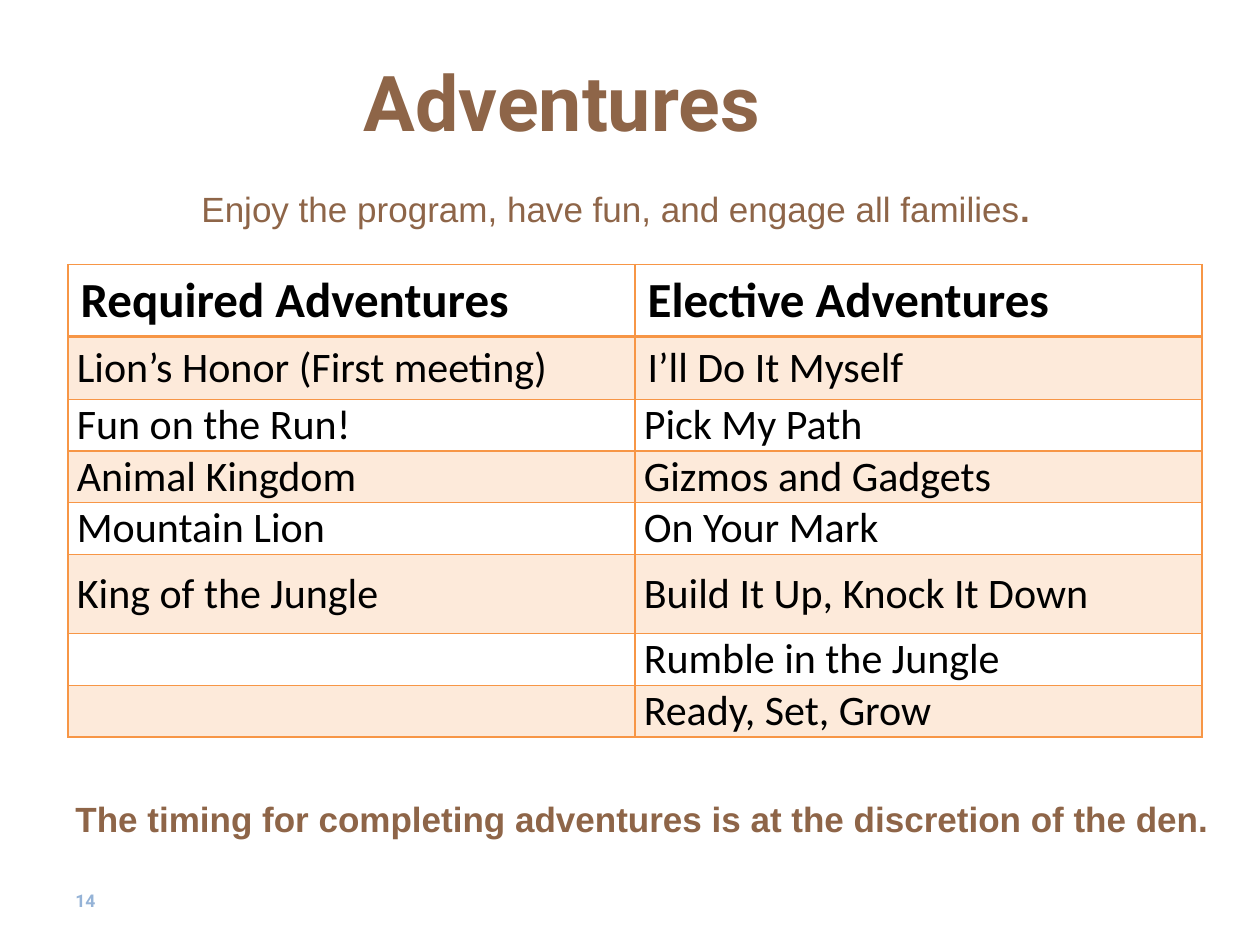
from lxml import etree
from pptx import Presentation
from pptx.dml.color import RGBColor
from pptx.enum.text import MSO_ANCHOR, PP_ALIGN
from pptx.oxml.ns import qn
from pptx.util import Inches, Pt

TOP = MSO_ANCHOR.TOP
MIDDLE = MSO_ANCHOR.MIDDLE
LEFT = PP_ALIGN.LEFT
CENTER = PP_ALIGN.CENTER

COLORS = {
    "brown": "8E6548",
    "number": "95B3D7",
    "border": "F79646",
    "band": "FDEADA",
    "text": "000000",
}

ADVENTURES = [
    ("Required Adventures", "Elective Adventures"),
    ("Lion’s Honor (First meeting)", "I’ll Do It Myself"),
    ("Fun on the Run!", "Pick My Path"),
    ("Animal Kingdom", "Gizmos and Gadgets"),
    ("Mountain Lion", "On Your Mark"),
    ("King of the Jungle", "Build It Up, Knock It Down"),
    ("", "Rumble in the Jungle"),
    ("", "Ready, Set, Grow"),
]
ROW_HEIGHTS = [0.57, 0.5, 0.41, 0.41, 0.41, 0.63, 0.41, 0.41]
ROOMY_CELLS = {(0, 0), (0, 1), (1, 1)}


class SlideBuilder:
    def __init__(self, slide):
        self.slide = slide

    def style(self, font, name, size, color, bold):
        font.name = name
        font.size = Pt(size)
        font.bold = bold
        font.color.rgb = RGBColor.from_string(COLORS[color])

    def text(self, box, runs, size, color="brown", name="Arial",
             bold=True, anchor=TOP, align=LEFT):
        shape = self.slide.shapes.add_textbox(*map(Inches, box))
        frame = shape.text_frame
        frame.word_wrap = True
        frame.vertical_anchor = anchor
        paragraph = frame.paragraphs[0]
        paragraph.alignment = align
        self.style(paragraph.font, name, size, color, bold)
        for words in runs:
            paragraph.add_run().text = words
        return paragraph

    def borders(self, cell, header_bottom, header_top):
        properties = cell._tc.get_or_add_tcPr()
        widths = {"a:lnL": 1, "a:lnR": 1,
                  "a:lnT": 2 if header_top else 1,
                  "a:lnB": 2 if header_bottom else 1}
        for position, (tag, width) in enumerate(widths.items()):
            line = etree.Element(qn(tag), w=str(Pt(width)))
            fill = etree.SubElement(line, qn("a:solidFill"))
            etree.SubElement(fill, qn("a:srgbClr"), val=COLORS["border"])
            properties.insert(position, line)

    def cell(self, cell, words, row, column):
        header = row == 0
        if (row, column) not in ROOMY_CELLS:
            cell.margin_left = cell.margin_right = Inches(0.07)
            cell.margin_top = cell.margin_bottom = 0
            cell.vertical_anchor = MIDDLE
        if row % 2:
            cell.fill.solid()
            cell.fill.fore_color.rgb = RGBColor.from_string(COLORS["band"])
        else:
            cell.fill.background()
        self.borders(cell, header, row == 1)
        if words:
            cell.text = words
            paragraph = cell.text_frame.paragraphs[0]
            self.style(paragraph.font, "Calibri", 28 if header else 24, "text", header)

    def table(self, left, top, width, rows, heights):
        columns = len(rows[0])
        frame = self.slide.shapes.add_table(
            len(rows), columns, Inches(left), Inches(top),
            Inches(width), Inches(sum(heights)))
        table = frame.table
        for column in table.columns:
            column.width = Inches(width / columns)
        for row, (values, height) in enumerate(zip(rows, heights)):
            table.rows[row].height = Inches(height)
            for column, words in enumerate(values):
                self.cell(table.cell(row, column), words, row, column)


def main():
    presentation = Presentation()
    presentation.slide_width = Inches(10)
    presentation.slide_height = Inches(7.5)
    builder = SlideBuilder(presentation.slides.add_slide(presentation.slide_layouts[6]))

    builder.text((0.5, 0.17, 7.92, 1.25), ["Adventures"], 44,
                 name="Roboto", anchor=MIDDLE, align=CENTER)
    builder.text((0.5, 6.95, 2.33, 0.4), ["14"], 10, "number", "Roboto", anchor=MIDDLE)
    builder.text((0.5, 6.28, 9.25, 0.44),
                 ["The timing for completing adventures is at the discretion of the den."], 20)
    builder.table(0.54, 2.1, 9, ADVENTURES, ROW_HEIGHTS)
    subtitle = builder.text(
        (1.5, 1.44, 7.42, 0.44),
        ["Enjoy the program, have fun, and engage all families", "."], 20, bold=False)
    subtitle.runs[-1].font.bold = True

    presentation.save("out.pptx")


if __name__ == "__main__":
    main()
